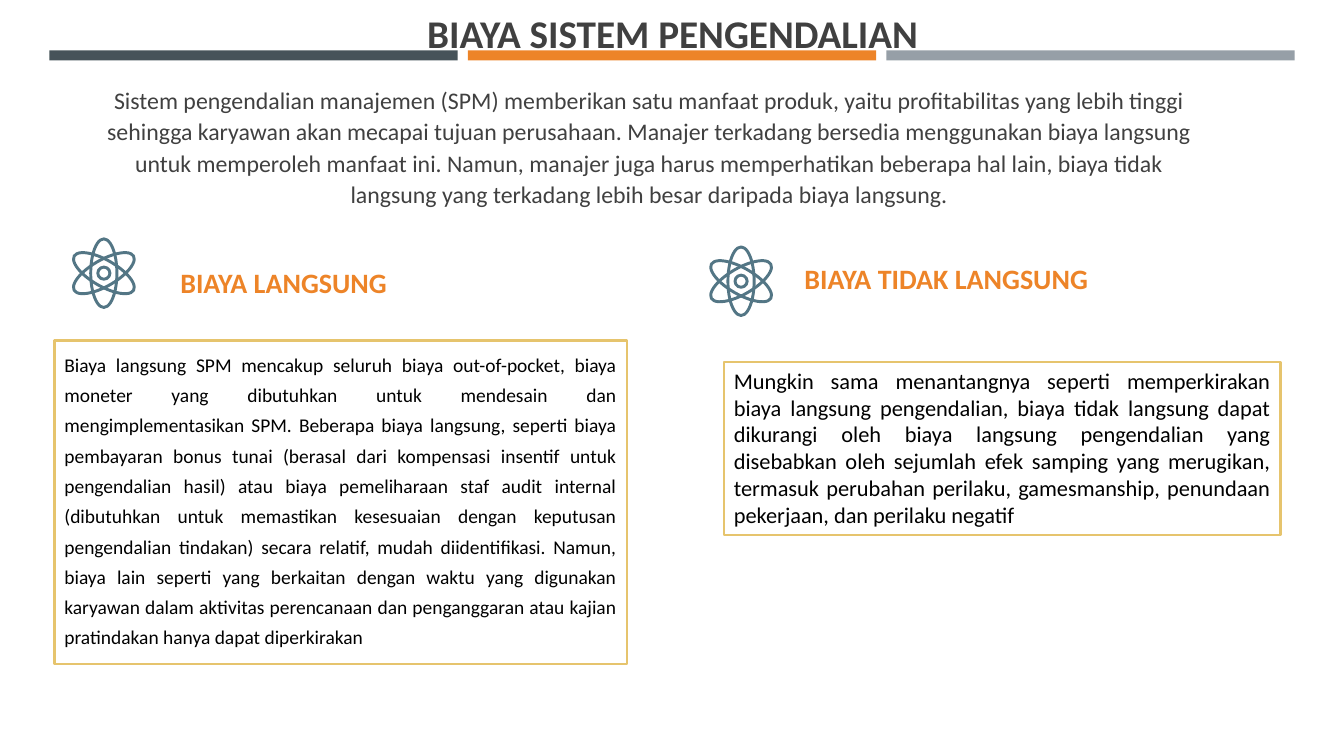
"""Build the slide on the costs of a management control system."""
from dataclasses import dataclass
from typing import Optional

from pptx import Presentation
from pptx.dml.color import RGBColor
from pptx.enum import shapes, text
from pptx.util import Inches, Pt


@dataclass(frozen=True)
class Theme:
    """Colours and type sizes of the slide."""
    font: str = "Calibri"
    bars: tuple[str, ...] = ("465359", "ED8428", "969FA7")
    accent: str = "ED8428"
    grey: str = "404040"
    black: str = "000000"
    white: str = "FFFFFF"
    border: str = "E6C46D"
    icon: str = "537685"
    title_size: float = 28
    heading_size: float = 20
    intro_size: float = 17
    direct_size: float = 13.9
    indirect_size: float = 16
    border_width: float = 1.75
    icon_width: float = 2.1


@dataclass(frozen=True)
class Block:
    """A piece of text with its place and style."""
    words: str
    left: float
    top: float
    width: float
    height: float
    size: float
    color: str
    bold: bool = False
    align: text.PP_ALIGN = text.PP_ALIGN.LEFT
    anchor: text.MSO_ANCHOR = text.MSO_ANCHOR.TOP
    spacing: Optional[float] = None
    framed: bool = False


@dataclass(frozen=True)
class Atom:
    """The centre of an atom icon."""
    x: float
    y: float


THEME = Theme()
ALIGN = text.PP_ALIGN
ANCHOR = text.MSO_ANCHOR

BLOCKS = (
    Block("BIAYA SISTEM PENGENDALIAN", 0.64, 0, 12.06, 0.61, THEME.title_size,
          THEME.grey, bold=True, align=ALIGN.CENTER, anchor=ANCHOR.BOTTOM),
    Block("Sistem pengendalian manajemen (SPM) memberikan satu manfaat produk, "
          "yaitu profitabilitas yang lebih tinggi sehingga karyawan akan mecapai "
          "tujuan perusahaan. Manajer terkadang bersedia menggunakan biaya langsung "
          "untuk memperoleh manfaat ini. Namun, manajer juga harus memperhatikan "
          "beberapa hal lain, biaya tidak langsung yang terkadang lebih besar "
          "daripada biaya langsung.", 0.96, 0.77, 10.96, 1.73, THEME.intro_size,
          THEME.grey, align=ALIGN.CENTER, spacing=1.1),
    Block("BIAYA LANGSUNG", 1.69, 2.5, 3.15, 0.61, THEME.heading_size,
          THEME.accent, bold=True, anchor=ANCHOR.MIDDLE),
    Block("BIAYA TIDAK LANGSUNG", 7.88, 2.46, 4.04, 0.61, THEME.heading_size,
          THEME.accent, bold=True, anchor=ANCHOR.MIDDLE),
    Block("Biaya langsung SPM mencakup seluruh biaya out-of-pocket, biaya moneter "
          "yang dibutuhkan untuk mendesain dan mengimplementasikan SPM. Beberapa "
          "biaya langsung, seperti biaya pembayaran bonus tunai (berasal dari "
          "kompensasi insentif untuk pengendalian hasil) atau biaya pemeliharaan "
          "staf audit internal (dibutuhkan untuk memastikan kesesuaian dengan "
          "keputusan pengendalian tindakan) secara relatif, mudah diidentifikasi. "
          "Namun, biaya lain seperti yang berkaitan dengan waktu yang digunakan "
          "karyawan dalam aktivitas perencanaan dan penganggaran atau kajian "
          "pratindakan hanya dapat diperkirakan", 0.54, 3.38, 5.68, 3.21,
          THEME.direct_size, THEME.black, align=ALIGN.JUSTIFY, spacing=1.3,
          framed=True),
    Block("Mungkin sama menantangnya seperti memperkirakan biaya langsung "
          "pengendalian, biaya tidak langsung dapat dikurangi oleh biaya langsung "
          "pengendalian yang disebabkan oleh sejumlah efek samping yang merugikan, "
          "termasuk perubahan perilaku, gamesmanship, penundaan pekerjaan, dan "
          "perilaku negatif", 7.18, 3.59, 5.52, 1.72, THEME.indirect_size,
          THEME.black, align=ALIGN.JUSTIFY, framed=True),
)
ATOMS = (Atom(1.03, 2.71), Atom(7.35, 2.79))


def add_bars(page) -> None:
    """Draw the three header bars at equal steps."""
    for index, color in enumerate(THEME.bars):
        bar = page.shapes.add_shape(
            shapes.MSO_SHAPE.RECTANGLE, Inches(0.49 + 4.15 * index), Inches(0.5),
            Inches(4.05), Inches(0.1))
        bar.shadow.inherit = False
        bar.fill.solid()
        bar.fill.fore_color.rgb = RGBColor.from_string(color)
        bar.line.fill.background()


def add_block(page, block: Block) -> None:
    """Draw a text block, with a frame where it asks for one."""
    place = [Inches(v) for v in (block.left, block.top, block.width, block.height)]
    if block.framed:
        box = page.shapes.add_shape(shapes.MSO_SHAPE.RECTANGLE, *place)
        box.shadow.inherit = False
        box.fill.solid()
        box.fill.fore_color.rgb = RGBColor.from_string(THEME.white)
        box.line.color.rgb = RGBColor.from_string(THEME.border)
        box.line.width = Pt(THEME.border_width)
    else:
        box = page.shapes.add_textbox(*place)
    frame = box.text_frame
    frame.text = block.words
    frame.word_wrap = True
    frame.vertical_anchor = block.anchor
    para = frame.paragraphs[0]
    para.alignment = block.align
    para.line_spacing = block.spacing
    font = para.runs[0].font
    font.name = THEME.font
    font.size = Pt(block.size)
    font.bold = block.bold
    font.color.rgb = RGBColor.from_string(block.color)


def add_ring(group, atom: Atom, width: float, height: float, angle: float) -> None:
    """Draw one unfilled ellipse around the centre of an atom."""
    ring = group.shapes.add_shape(
        shapes.MSO_SHAPE.OVAL, Inches(atom.x - width / 2), Inches(atom.y - height / 2),
        Inches(width), Inches(height))
    ring.rotation = angle
    ring.shadow.inherit = False
    ring.fill.background()
    ring.line.color.rgb = RGBColor.from_string(THEME.icon)
    ring.line.width = Pt(THEME.icon_width)


def add_atom(page, atom: Atom) -> None:
    """Draw an atom as three orbits and a nucleus."""
    group = page.shapes.add_group_shape()
    for angle in (0, 60, 120):
        add_ring(group, atom, 0.26, 0.68, angle)
    add_ring(group, atom, 0.12, 0.12, 0)


def main() -> None:
    """Assemble and save the deck."""
    deck = Presentation()
    deck.slide_width, deck.slide_height = Inches(13.33), Inches(7.5)
    page = deck.slides.add_slide(deck.slide_layouts[6])
    add_bars(page)
    for block in BLOCKS:
        add_block(page, block)
    for atom in ATOMS:
        add_atom(page, atom)
    deck.save("out.pptx")


if __name__ == "__main__":
    main()
